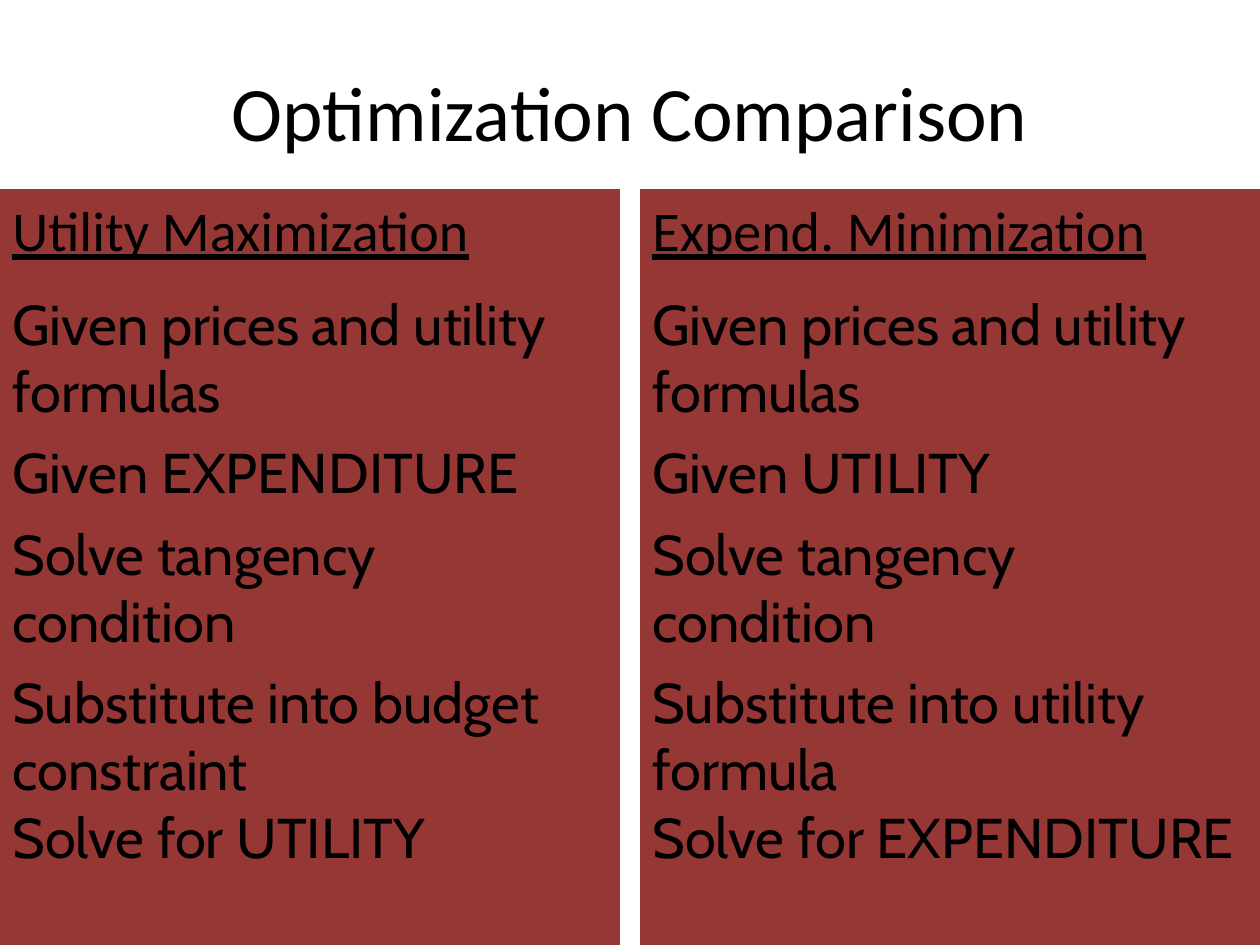
from pptx import Presentation
from pptx.dml.color import RGBColor
from pptx.enum.shapes import MSO_SHAPE as Shape
from pptx.enum.text import MSO_ANCHOR as Anchor, PP_ALIGN as Align
from pptx.util import Inches, Pt

TITLE = "Optimization Comparison"
COLUMNS = [
    ("Utility Maximization", [
        "Given prices and utility formulas",
        "Given EXPENDITURE",
        "Solve tangency condition",
        "Substitute into budget constraint",
        "Solve for UTILITY",
    ]),
    ("Expend. Minimization", [
        "Given prices and utility formulas",
        "Given UTILITY",
        "Solve tangency condition",
        "Substitute into utility formula",
        "Solve for EXPENDITURE",
    ]),
]
# Top and height of each step, shared by both columns
STEP_ROWS = [(2.25, 1.18), (3.42, 0.64), (4.07, 1.18), (5.25, 1.18), (6.32, 0.64)]

THEME = {
    "panel": RGBColor(0x95, 0x37, 0x35),
    "text": RGBColor(0, 0, 0),
    "heading_font": "Calibri",
    "step_font": "Cabin",
    "title_size": Pt(44),
    "body_size": Pt(32),
}
SLIDE_WIDTH, SLIDE_HEIGHT = 10, 7.5
PANEL_TOP, PANEL_WIDTH, PANEL_HEIGHT = 1.5, 4.92, 6.02


def write(holder, text, font_name, size, align=Align.LEFT, anchor=Anchor.TOP, underline=None):
    frame = holder.text_frame
    frame.word_wrap = True
    frame.vertical_anchor = anchor
    line = frame.paragraphs[0]
    line.text = text
    line.alignment = align
    line.font.name = font_name
    line.font.size = size
    line.font.color.rgb = THEME["text"]
    line.font.underline = underline


def add_column(slide, left, heading, steps):
    panel = slide.shapes.add_shape(
        Shape.RECTANGLE, Inches(left), Inches(PANEL_TOP), Inches(PANEL_WIDTH), Inches(PANEL_HEIGHT))
    panel.shadow.inherit = False
    panel.fill.solid()
    panel.fill.fore_color.rgb = THEME["panel"]
    panel.line.fill.background()
    write(panel, heading, THEME["heading_font"], THEME["body_size"], underline=True)

    for step, (top, height) in zip(steps, STEP_ROWS):
        step_box = slide.shapes.add_textbox(
            Inches(left), Inches(top), Inches(PANEL_WIDTH), Inches(height))
        write(step_box, step, THEME["step_font"], THEME["body_size"])


def main():
    deck = Presentation()
    deck.slide_width, deck.slide_height = Inches(SLIDE_WIDTH), Inches(SLIDE_HEIGHT)
    slide = deck.slides.add_slide(deck.slide_layouts[6])

    title = slide.shapes.add_textbox(Inches(0.5), Inches(0.25), Inches(9), Inches(1.25))
    write(title, TITLE, THEME["heading_font"], THEME["title_size"], Align.CENTER, Anchor.MIDDLE)

    for index, (heading, steps) in enumerate(COLUMNS):
        add_column(slide, index * (SLIDE_WIDTH - PANEL_WIDTH), heading, steps)

    deck.save("out.pptx")


if __name__ == "__main__":
    main()
